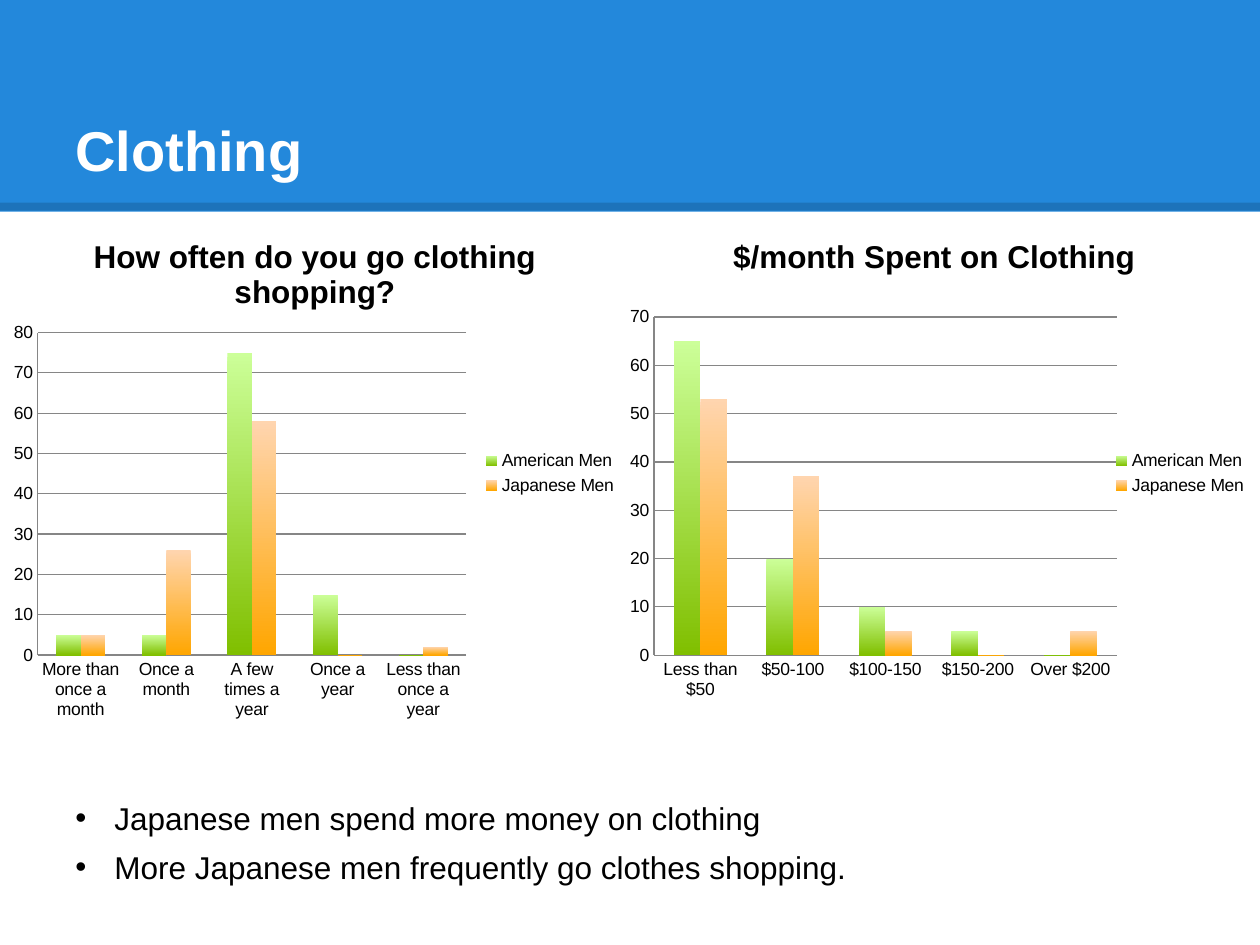
import pptx
import pptx.chart.data
import pptx.dml.color
import pptx.enum.chart
import pptx.enum.shapes
import pptx.enum.text
import pptx.oxml
import pptx.oxml.ns
import pptx.util
from lxml import etree
from pptx.dml.color import RGBColor
from pptx.util import Inches

BLUE = RGBColor(0x23, 0x88, 0xDB)
WHITE = RGBColor(0xFF, 0xFF, 0xFF)
BLACK = RGBColor(0x00, 0x00, 0x00)
GRAY = RGBColor(0x86, 0x86, 0x86)
GREEN_RAMP = (RGBColor(0xCC, 0xFF, 0x99), RGBColor(0x80, 0xBF, 0x00))
ORANGE_RAMP = (RGBColor(0xFF, 0xD5, 0xAF), RGBColor(0xFF, 0xA6, 0x00))
FONT = "Arial"


def add_child(parent, tag, **attributes):
    return etree.SubElement(parent, pptx.oxml.ns.qn(tag), attributes)


def write_text(para, text, size=18, color=BLACK, bold=False):
    span = para.add_run()
    span.text = text
    style_font(span.font, size, color, bold)


def style_font(font, size, color=BLACK, bold=False):
    font.name = FONT
    font.size = pptx.util.Pt(size)
    font.color.rgb = color
    font.bold = bold


class SlideBuilder:
    ramps = (GREEN_RAMP, ORANGE_RAMP)
    axis_size = 10
    title_size = 18

    def __init__(self, page):
        self.page = page

    def band(self, left, top, width, height, color):
        shape = self.page.shapes.add_shape(
            pptx.enum.shapes.MSO_SHAPE.RECTANGLE,
            Inches(left), Inches(top), Inches(width), Inches(height))
        shape.shadow.inherit = False
        shape.fill.solid()
        shape.fill.fore_color.rgb = color
        shape.line.fill.background()

    def rule(self, left, right, y, weight, opacity):
        line = self.page.shapes.add_connector(
            pptx.enum.shapes.MSO_CONNECTOR.STRAIGHT,
            Inches(left), Inches(y), Inches(right), Inches(y))
        line.line.width = pptx.util.Pt(weight)
        line.line.color.rgb = BLACK
        color = line.line._ln.find(".//" + pptx.oxml.ns.qn("a:srgbClr"))
        add_child(color, "a:alpha", val=str(opacity * 1000))
        add_child(line._element.spPr, "a:effectLst")

    def text_box(self, left, top, width, height, anchor):
        box = self.page.shapes.add_textbox(
            Inches(left), Inches(top), Inches(width), Inches(height))
        frame = box.text_frame
        frame.word_wrap = True
        frame.vertical_anchor = anchor
        frame.margin_left = frame.margin_right = Inches(0.1)
        frame.margin_top = frame.margin_bottom = Inches(0.1)
        return frame

    def title(self, text):
        frame = self.text_box(0.5, 0.3, 9, 1.25, pptx.enum.text.MSO_ANCHOR.BOTTOM)
        write_text(frame.paragraphs[0], text, size=32, color=WHITE, bold=True)

    def bullets(self, left, top, width, height, lines):
        frame = self.text_box(left, top, width, height, pptx.enum.text.MSO_ANCHOR.TOP)
        indent = Inches(0.31)
        for index, text in enumerate(lines):
            para = frame.add_paragraph() if index else frame.paragraphs[0]
            para.line_spacing = 1.3
            properties = para._p.get_or_add_pPr()
            properties.set("marL", str(indent))
            properties.set("indent", str(-indent))
            add_child(properties, "a:buFont", typeface=FONT)
            add_child(properties, "a:buChar", char="•")
            write_text(para, text)

    def column_chart(self, left, width, title, categories, series, plot):
        data = pptx.chart.data.CategoryChartData()
        data.categories = categories
        for name, values in series.items():
            data.add_series(name, values)
        chart = self.page.shapes.add_chart(
            pptx.enum.chart.XL_CHART_TYPE.COLUMN_CLUSTERED,
            Inches(left), Inches(1.69), Inches(width), Inches(4.13), data).chart
        style_font(chart.font, self.axis_size)

        chart.has_title = True
        write_text(chart.chart_title.text_frame.paragraphs[0], title,
                   size=self.title_size, bold=True)
        chart.chart_title.include_in_layout = False
        chart.has_legend = True
        chart.legend.position = pptx.enum.chart.XL_LEGEND_POSITION.RIGHT
        chart.legend.include_in_layout = False

        # Axes and grid
        chart.value_axis.has_major_gridlines = True
        for axis in (chart.category_axis, chart.value_axis):
            axis.major_tick_mark = pptx.enum.chart.XL_TICK_MARK.NONE
            axis.minor_tick_mark = pptx.enum.chart.XL_TICK_MARK.NONE
        for part in (chart.category_axis, chart.value_axis,
                     chart.value_axis.major_gridlines):
            part.format.line.color.rgb = GRAY
            part.format.line.width = pptx.util.Pt(0.75)

        # Columns shaded from light at the top to dark at the bottom
        chart.plots[0].gap_width = 150
        chart.plots[0].vary_by_categories = False
        for column, ramp in zip(chart.plots[0].series, self.ramps):
            fill = column.format.fill
            fill.gradient()
            fill.gradient_angle = 270
            for stop, color in zip(fill.gradient_stops, ramp):
                stop.color.rgb = color
        self.place_plot(chart, plot)

    def place_plot(self, chart, plot):
        area = chart._chartSpace.find(".//" + pptx.oxml.ns.qn("c:plotArea"))
        for old in area.findall(pptx.oxml.ns.qn("c:layout")):
            area.remove(old)
        layout = etree.Element(pptx.oxml.ns.qn("c:layout"))
        area.insert(0, layout)
        manual = add_child(layout, "c:manualLayout")
        add_child(manual, "c:layoutTarget", val="inner")
        for side in "xy":
            add_child(manual, f"c:{side}Mode", val="edge")
        for side, share in zip("xywh", plot):
            add_child(manual, f"c:{side}", val=str(share))


def main():
    deck = pptx.Presentation()
    deck.slide_width, deck.slide_height = Inches(10), Inches(7.5)
    builder = SlideBuilder(deck.slides.add_slide(deck.slide_layouts[6]))

    # Header
    builder.band(0, 0, 10, 1.68, BLUE)
    builder.rule(0, 10, 1.64, weight=4.5, opacity=15)
    builder.title("Clothing")

    # Survey charts
    builder.column_chart(
        0, 5, "How often do you go clothing shopping?",
        ["More than once a month", "Once a month", "A few times a year",
         "Once a year", "Less than once a year"],
        {"American Men": (5, 5, 75, 15, 0), "Japanese Men": (5, 26, 58, 0, 2)},
        plot=(0.06, 0.23, 0.68, 0.62))
    builder.column_chart(
        4.83, 5.17, "$/month Spent on Clothing",
        ["Less than $50", "$50-100", "$100-150", "$150-200", "Over $200"],
        {"American Men": (65, 20, 10, 5, 0), "Japanese Men": (53, 37, 5, 0, 5)},
        plot=(0.07, 0.2, 0.71, 0.65))

    # Findings
    builder.bullets(0.5, 6.15, 8.85, 0.89, [
        "Japanese men spend more money on clothing",
        "More Japanese men frequently go clothes shopping."])

    deck.save("out.pptx")


if __name__ == "__main__":
    main()
